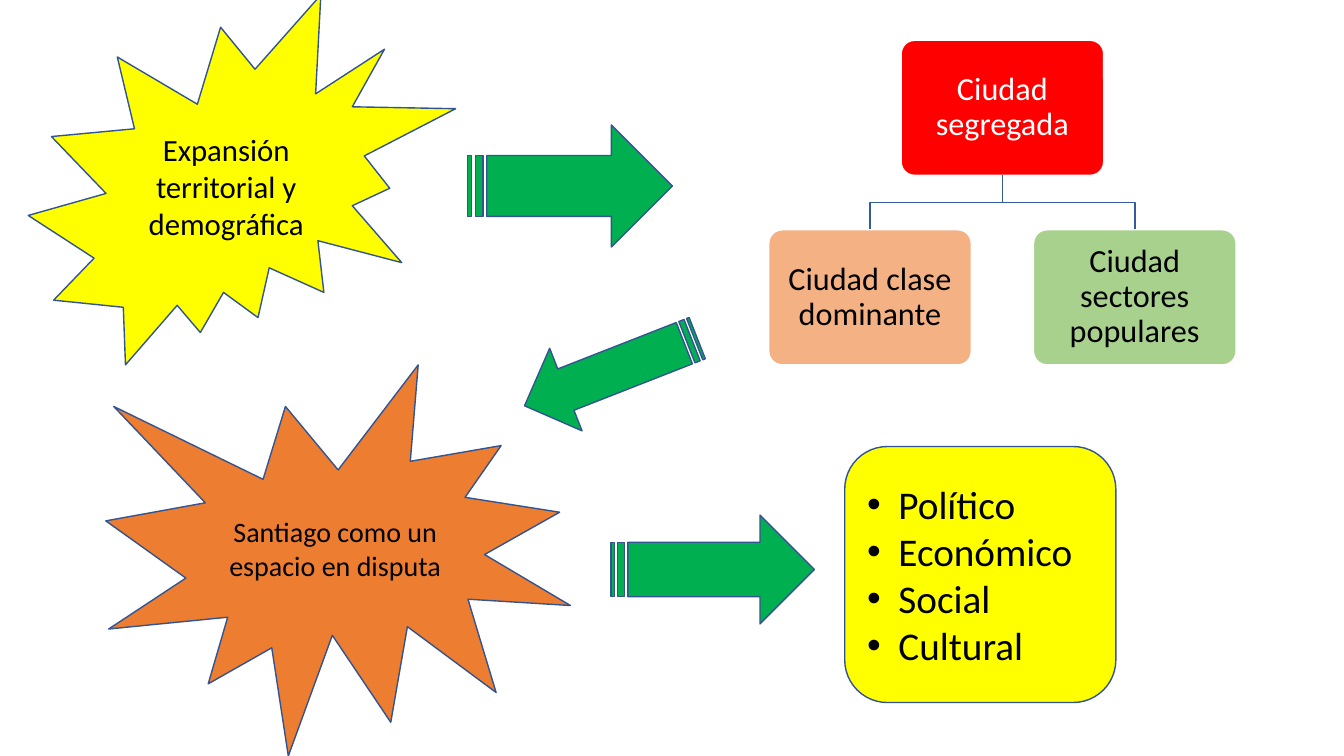
from pptx import Presentation
from pptx.dml.color import RGBColor
from pptx.enum.shapes import MSO_SHAPE
from pptx.enum.text import MSO_ANCHOR, MSO_AUTO_SIZE, PP_ALIGN
from pptx.util import Inches, Pt

BOX = MSO_SHAPE.ROUNDED_RECTANGLE
ARROW = MSO_SHAPE.STRIPED_RIGHT_ARROW
BURST_WIDE = MSO_SHAPE.EXPLOSION1
BURST_TILTED = MSO_SHAPE.EXPLOSION2
MIDDLE = MSO_ANCHOR.MIDDLE
NO_AUTOFIT = MSO_AUTO_SIZE.NONE
CENTER = PP_ALIGN.CENTER
LEFT = PP_ALIGN.LEFT

COLORS = {
    "white": "FFFFFF", "black": "000000", "red": "FF0000", "peach": "F4B183",
    "sage": "A9D18E", "yellow": "FFFF00", "orange": "ED7D31",
    "green": "00B050", "outline": "325491", "branch": "365B9D",
}


def color(name):
    return RGBColor.from_string(COLORS[name])


def assign(target, values):
    for name, value in values.items():
        setattr(target, name, value)


class Board:
    font = "Calibri"
    columns, rows = 40, 30

    def __init__(self, deck):
        self.column = deck.slide_width / self.columns
        self.row = deck.slide_height / self.rows
        self.slide = deck.slides.add_slide(deck.slide_layouts[1])
        heading = self.slide.shapes.title
        heading.element.getparent().remove(heading.element)

    def place(self, col, row, wide, high):
        return [round(n * unit) for n, unit in
                ((col, self.column), (row, self.row),
                 (wide, self.column), (high, self.row))]

    def outline(self, figure, line):
        figure.shadow.inherit = False
        figure.line.color.rgb = color(line)
        figure.line.width = Pt(1)

    def add_words(self, paragraph, words, size, ink="black", **layout):
        assign(paragraph, layout)
        run = paragraph.add_run()
        run.text = words
        assign(run.font, {"name": self.font, "size": Pt(size)})
        run.font.color.rgb = color(ink)

    def figure(self, kind, area, fill, line="outline", corner=None, turn=0):
        figure = self.slide.shapes.add_shape(kind, *self.place(*area))
        figure.fill.solid()
        figure.fill.fore_color.rgb = color(fill)
        figure.rotation = turn
        self.outline(figure, line)
        if corner is not None:
            figure.adjustments[0] = corner
        return figure

    def label(self, figure, words, size, ink="black", inset=None, spacing=None):
        frame = figure.text_frame
        assign(frame, {"word_wrap": True, "vertical_anchor": MIDDLE})
        if inset:
            sides = ("left", "right", "top", "bottom")
            assign(frame, {f"margin_{side}": Inches(inset) for side in sides})
        self.add_words(frame.paragraphs[0], words, size, ink,
                       alignment=CENTER, line_spacing=spacing)

    def branch(self, start, end):
        (col, top), (end_col, bottom) = start, end
        bend = (top + bottom) / 2
        corners = [self.place(*point, 0, 0)[:2] for point in
                   (start, (col, bend), (end_col, bend), end)]
        builder = self.slide.shapes.build_freeform(*corners[0])
        builder.add_line_segments(corners[1:], close=False)
        elbow = builder.convert_to_shape()
        elbow.fill.background()
        self.outline(elbow, "branch")

    def bullets(self, area, items, size):
        body = self.slide.placeholders[1]
        edges = ("left", "top", "width", "height")
        assign(body, dict(zip(edges, self.place(*area))))
        self.slide.shapes.element.append(body.element)
        frame = body.text_frame
        assign(frame, {"word_wrap": True, "vertical_anchor": MIDDLE,
                       "auto_size": NO_AUTOFIT})
        indent = Inches(0.31)
        for index, item in enumerate(items):
            paragraph = frame.add_paragraph() if index else frame.paragraphs[0]
            self.add_words(paragraph, item, size,
                           alignment=LEFT, space_before=Pt(0))
            properties = paragraph._p.get_or_add_pPr()
            properties.set("marL", str(indent))
            properties.set("indent", str(-indent))


def main():
    deck = Presentation()
    assign(deck, {"slide_width": Inches(13.33), "slide_height": Inches(7.5)})
    board = Board(deck)

    city_wide, city_high = 6.03, 5.36
    city_col, city_row, class_row, spread = 26.82, 1.6, 9.12, 3.94
    center = city_col + city_wide / 2
    cities = [
        ("Ciudad segregada", 0, city_row, "red", "white"),
        ("Ciudad clase dominante", -spread, class_row, "peach", "black"),
        ("Ciudad sectores populares", spread, class_row, "sage", "black"),
    ]
    for words, shift, row, fill, ink in cities:
        if shift:
            board.branch((center, city_row + city_high), (center + shift, row))
        city = board.figure(BOX, (city_col + shift, row, city_wide, city_high),
                            fill, "white", corner=0.1)
        board.label(city, words, 23, ink, inset=0.1, spacing=0.9)

    expansion = board.figure(BURST_TILTED, (0.84, -0.2, 12.72, 14.68), "yellow")
    board.label(expansion, "Expansión territorial y demográfica", 22)
    dispute = board.figure(BURST_WIDE, (3.15, 14.48, 13.83, 15.52), "orange")
    board.label(dispute, "Santiago como un espacio en disputa", 20)

    for area, turn in (
        ((13.92, 4.96, 6.09, 4.84), 0),
        ((15.42, 13, 5.52, 3.52), 158.6),
        ((18.18, 20.44, 6.06, 4.32), 0),
    ):
        board.figure(ARROW, area, "green", turn=turn)

    col, row, wide, high = 25.14, 17.72, 8.07, 10.16
    pad_col, pad_row = 0.37, 0.5
    board.figure(BOX, (col, row, wide, high), "yellow")
    board.bullets((col + pad_col, row + pad_row,
                   wide - 2 * pad_col, high - 2 * pad_row),
                  ["Político", "Económico", "Social", "Cultural"], 28)

    deck.save("out.pptx")


if __name__ == "__main__":
    main()
